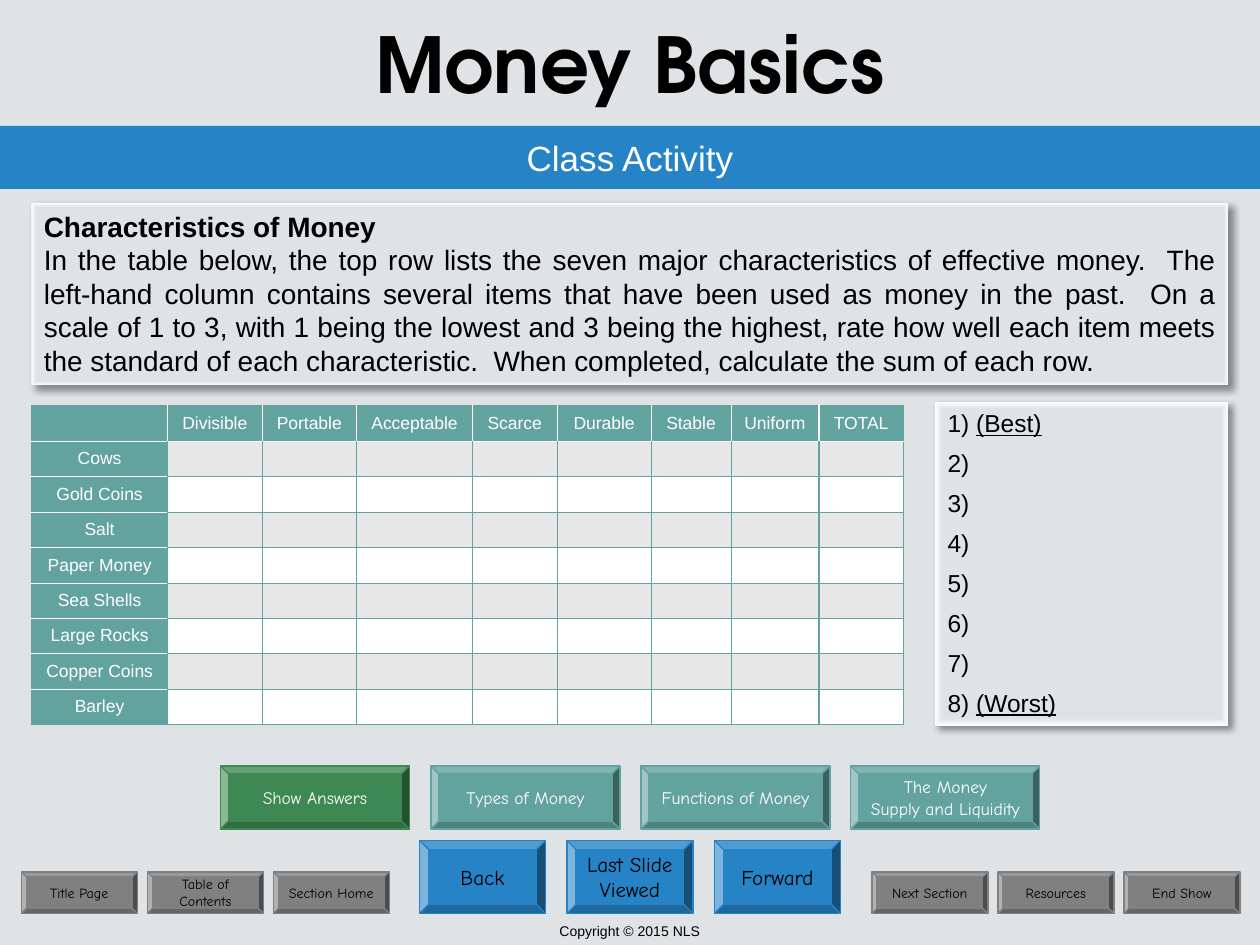
from lxml import etree
from pptx import Presentation
from pptx.dml.color import RGBColor
from pptx.enum.shapes import MSO_SHAPE
from pptx.enum.text import MSO_ANCHOR, MSO_AUTO_SIZE, PP_ALIGN
from pptx.oxml import parse_xml
from pptx.oxml.ns import qn
from pptx.util import Inches, Pt

RECT, BEVEL = MSO_SHAPE.RECTANGLE, MSO_SHAPE.BEVEL
CENTER, JUSTIFY = PP_ALIGN.CENTER, PP_ALIGN.JUSTIFY
TOP, MIDDLE = MSO_ANCHOR.TOP, MSO_ANCHOR.MIDDLE
NO_FIT = MSO_AUTO_SIZE.NONE

BLUE, TEAL, GREEN, GREY = "2683C6", "62A39F", "3E8853", "808080"
PAGE, BAND, WHITE, BLACK = "DFE3E5", "E7E7E7", "FFFFFF", "000000"
SANS, HAND, DISPLAY = "Arial", "Comic Neue", "TeX Gyre Adventor"
NS = 'xmlns:a="http://schemas.openxmlformats.org/drawingml/2006/main"'

TRAITS = ["", "Divisible", "Portable", "Acceptable", "Scarce", "Durable",
          "Stable", "Uniform", "TOTAL"]
ITEMS = ["Cows", "Gold Coins", "Salt", "Paper Money", "Sea Shells",
         "Large Rocks", "Copper Coins", "Barley"]
COL_WIDTHS = [1.08, 0.75, 0.75, 0.92, 0.67, 0.75, 0.63, 0.7, 0.67]
TASK = ("In the table below, the top row lists the seven major characteristics "
        "of effective money.  The left-hand column contains several items that "
        "have been used as money in the past.  On a scale of 1 to 3, with 1 "
        "being the lowest and 3 being the highest, rate how well each item "
        "meets the standard of each characteristic.  When completed, calculate "
        "the sum of each row.")


def rgb(color):
    return RGBColor.from_string(color)


def set_attrs(obj, values):
    for name, value in values.items():
        setattr(obj, name, value)


def place(s, left, top, width, height):
    set_attrs(s, dict(left=Inches(left), top=Inches(top),
                      width=Inches(width), height=Inches(height)))


def write(tf, paragraphs, font, size, color, align=CENTER, after=0):
    """Each paragraph is a list of (text, font settings) runs."""
    for i, runs in enumerate(paragraphs):
        p = tf.paragraphs[0] if i == 0 else tf.add_paragraph()
        set_attrs(p, dict(alignment=align, space_before=Pt(0), space_after=Pt(after)))
        for text, extra in runs:
            r = p.add_run()
            r.text = text
            set_attrs(r.font, dict(name=font, size=Pt(size), **extra))
            r.font.color.rgb = rgb(color)


def add_box(slide, kind, box, fill, line=None):
    s = slide.shapes.add_shape(kind, *map(Inches, box))
    s.shadow.inherit = False
    s.fill.solid()
    s.fill.fore_color.rgb = rgb(fill)
    if line:
        s.line.color.rgb = rgb(line)
        s.line.width = Pt(0.75)
    else:
        s.line.fill.background()
    return s


def style_panel(s):
    """Light rim around the edge and a soft drop shadow."""
    s.fill.solid()
    s.shadow.inherit = False
    spPr = s._element.spPr
    gradient = parse_xml(
        f'<a:gradFill {NS} rotWithShape="1"><a:gsLst>'
        f'<a:gs pos="95000"><a:srgbClr val="{PAGE}"/></a:gs>'
        f'<a:gs pos="100000"><a:srgbClr val="{WHITE}"/></a:gs></a:gsLst>'
        '<a:path path="shape"><a:fillToRect l="50000" t="50000" r="50000" '
        'b="50000"/></a:path></a:gradFill>')
    spPr.replace(spPr.find(qn("a:solidFill")), gradient)
    spPr.find(qn("a:effectLst")).append(parse_xml(
        f'<a:outerShdw {NS} blurRad="{Pt(4)}" dist="{Pt(3)}" dir="2700000" '
        f'algn="tl" rotWithShape="0"><a:srgbClr val="{BLACK}">'
        '<a:alpha val="40000"/></a:srgbClr></a:outerShdw>'))
    set_attrs(s.text_frame, dict(word_wrap=True, vertical_anchor=TOP,
                                 auto_size=NO_FIT))


def add_buttons(slide, labels, first, pitch, top, size, fill, font_size, color):
    for i, label in enumerate(labels):
        s = add_box(slide, BEVEL, (first + i * pitch, top, *size), fill, fill)
        s.adjustments[0] = 0.125
        set_attrs(s.text_frame, dict(word_wrap=False, vertical_anchor=MIDDLE))
        lines = [[(text, {})] for text in label.split("\n")]
        write(s.text_frame, lines, HAND, font_size, color)


def add_border(cell, side, color, width):
    ln = etree.SubElement(cell._tc.get_or_add_tcPr(), qn(f"a:ln{side}"), w=str(Pt(width)))
    fill = etree.SubElement(ln, qn("a:solidFill"))
    etree.SubElement(fill, qn("a:srgbClr"), val=color)


def vertical_edge(row, edge):
    if row == 0 and 0 < edge < 9:
        return WHITE, 1 if edge == 8 else 0.25
    return TEAL, 1 if edge in (0, 1, 8, 9) else 0.25


def horizontal_edge(col, edge):
    if edge in (0, 9):
        return TEAL, 1
    return (WHITE if edge == 1 or col == 0 else TEAL), 0.25


def add_rating_table(slide):
    rows = [TRAITS] + [[item] + [""] * 8 for item in ITEMS]
    frame = slide.shapes.add_table(9, 9, Inches(0.25), Inches(3.22),
                                   Inches(6.92), Inches(2.53))
    table = frame.table
    set_attrs(table, dict(first_row=False, horz_banding=False))
    for column, width in zip(table.columns, COL_WIDTHS):
        column.width = Inches(width)
    for r, row in enumerate(rows):
        for c, text in enumerate(row):
            cell = table.cell(r, c)
            set_attrs(cell, dict(vertical_anchor=MIDDLE,
                                 margin_left=Inches(0.05), margin_right=Inches(0.05),
                                 margin_top=Inches(0.04), margin_bottom=Inches(0.04)))
            add_border(cell, "L", *vertical_edge(r, c))
            add_border(cell, "R", *vertical_edge(r, c + 1))
            add_border(cell, "T", *horizontal_edge(c, r))
            add_border(cell, "B", *horizontal_edge(c, r + 1))
            cell.fill.solid()
            heading = r == 0 or c == 0
            cell.fill.fore_color.rgb = rgb(TEAL if heading else (WHITE, BAND)[r % 2])
            if text:
                write(cell.text_frame, [[(text, {})]], SANS, 10, WHITE)
            else:  # keep empty rows as low as the others
                p = cell.text_frame.paragraphs[0]
                etree.SubElement(p._p, qn("a:endParaRPr"), sz="1000")


def add_ranking(s):
    place(s, 7.42, 3.19, 2.33, 2.57)
    style_panel(s)
    notes = {1: "(Best)", 8: "(Worst)"}
    lines = [[(f"{n}) ", {}), (notes.get(n, "") + "\t\t", dict(underline=True))]
             for n in range(1, 9)]
    write(s.text_frame, lines, SANS, 14, BLACK, JUSTIFY, after=6)
    for p in s.text_frame.paragraphs:
        pPr = p._p.get_or_add_pPr()
        pPr.set("marL", "0")
        pPr.set("indent", "0")
        etree.SubElement(pPr, qn("a:buNone"))


def main():
    prs = Presentation()
    prs.slide_width, prs.slide_height = Inches(10), Inches(7.5)
    slide = prs.slides.add_slide(prs.slide_layouts[1])
    slide.background.fill.solid()
    slide.background.fill.fore_color.rgb = rgb(PAGE)

    # Title and subtitle band
    title = slide.shapes.title
    place(title, 0, 0, 10, 1)
    set_attrs(title.text_frame, dict(vertical_anchor=MIDDLE, auto_size=NO_FIT))
    write(title.text_frame, [[("Money Basics", dict(bold=True))]], DISPLAY, 44, BLACK)
    band = add_box(slide, RECT, (0, 1, 10, 0.5), BLUE)
    band.text_frame.vertical_anchor = MIDDLE
    write(band.text_frame, [[("Class Activity", {})]], SANS, 20, WHITE)

    # Instructions, rating table and ranking list
    panel = add_box(slide, RECT, (0.25, 1.61, 9.5, 1.45), PAGE)
    style_panel(panel)
    write(panel.text_frame, [[("Characteristics of Money", dict(bold=True))],
                             [(TASK, {})]], SANS, 16, BLACK, JUSTIFY)
    add_rating_table(slide)
    add_ranking(slide.placeholders[1])

    # Topic buttons
    topic = (1.5, 0.5)
    add_buttons(slide, ["Show Answers"], 1.75, 0, 6.08, topic, GREEN, 10, WHITE)
    add_buttons(slide, ["Types of Money", "Functions of Money",
                        "The Money\nSupply and Liquidity"],
                3.42, 5 / 3, 6.08, topic, TEAL, 10, WHITE)

    # Navigation buttons
    small = (0.92, 0.33)
    add_buttons(slide, ["Title Page", "Table of\nContents", "Section Home"],
                0.17, 1, 6.92, small, GREY, 8, BLACK)
    add_buttons(slide, ["Back", "Last Slide\nViewed", "Forward"],
                3.33, 1.17, 6.67, (1, 0.58), BLUE, 12, BLACK)
    add_buttons(slide, ["Next Section", "Resources", "End Show"],
                6.92, 1, 6.92, small, GREY, 8, BLACK)

    # Footer
    footer = slide.shapes.add_textbox(*map(Inches, (0, 7.27, 10, 0.23)))
    footer.text_frame.word_wrap = True
    write(footer.text_frame, [[("Copyright © 2015 NLS", {})]], SANS, 8, BLACK)

    prs.save("out.pptx")


if __name__ == "__main__":
    main()
